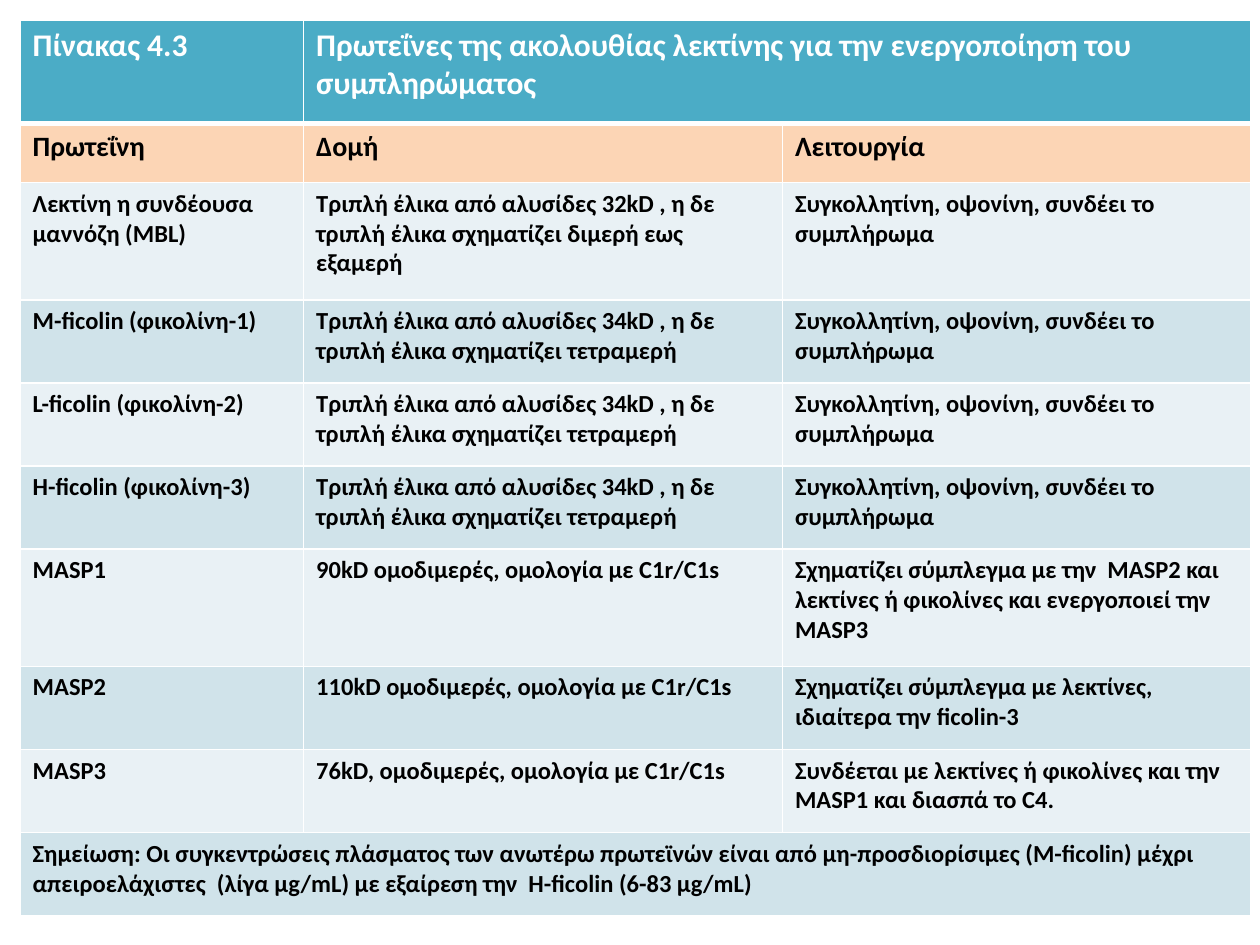
from dataclasses import dataclass

from lxml import etree
from pptx import Presentation
from pptx.dml.color import RGBColor
from pptx.oxml import ns
from pptx.util import Inches, Pt


@dataclass(frozen=True)
class Theme:
    font: str = "Calibri"
    white: str = "FFFFFF"
    black: str = "000000"
    title_fill: str = "4BACC6"
    heading_fill: str = "FCD5B5"
    bands: tuple = ("E9F1F5", "D0E3EA")
    title_size: int = 18
    heading_size: int = 16
    body_size: int = 14
    border: int = 1
    title_border: int = 3


THEME = Theme()
COLUMN_WIDTHS = (2.25, 3.8, 3.72)
TITLE_HEIGHT, HEADING_HEIGHT = 0.82, 0.47
TWO_LINES, THREE_LINES = 0.66, 0.93

TITLE = ("Πίνακας 4.3",
         "Πρωτεΐνες της ακολουθίας λεκτίνης για την ενεργοποίηση του συμπληρώματος")
HEADINGS = ("Πρωτεΐνη", "Δομή", "Λειτουργία")
TETRAMER = "Τριπλή έλικα από αλυσίδες 34kD , η δε τριπλή έλικα σχηματίζει τετραμερή"
OPSONIN = "Συγκολλητίνη, οψονίνη, συνδέει το συμπλήρωμα"
PROTEINS = (
    (THREE_LINES, ("Λεκτίνη η συνδέουσα μαννόζη (MBL)",
                   "Τριπλή έλικα από αλυσίδες 32kD , η δε τριπλή έλικα "
                   "σχηματίζει διμερή εως εξαμερή", OPSONIN)),
    (TWO_LINES, ("M-ficolin (φικολίνη-1)", TETRAMER, OPSONIN)),
    (TWO_LINES, ("L-ficolin (φικολίνη-2)", TETRAMER, OPSONIN)),
    (TWO_LINES, ("H-ficolin (φικολίνη-3)", TETRAMER, OPSONIN)),
    (THREE_LINES, ("MASP1", "90kD ομοδιμερές, ομολογία με C1r/C1s",
                   "Σχηματίζει σύμπλεγμα με την  MASP2 και λεκτίνες ή φικολίνες "
                   "και ενεργοποιεί την MASP3")),
    (TWO_LINES, ("MASP2", "110kD ομοδιμερές, ομολογία με C1r/C1s",
                 "Σχηματίζει σύμπλεγμα με λεκτίνες, ιδιαίτερα την ficolin-3")),
    (TWO_LINES, ("MASP3", "76kD, ομοδιμερές, ομολογία με C1r/C1s",
                 "Συνδέεται με λεκτίνες ή φικολίνες και την MASP1 και διασπά το C4.")),
)
NOTE = ("Σημείωση: Οι συγκεντρώσεις πλάσματος των ανωτέρω πρωτεϊνών είναι από "
        "μη-προσδιορίσιμες (M-ficolin) μέχρι απειροελάχιστες  (λίγα μg/mL) "
        "με εξαίρεση την  H-ficolin (6-83 μg/mL)")


def table_rows():
    """Return height, texts, fill, font colour and size of each row."""
    rows = [(TITLE_HEIGHT, TITLE, THEME.title_fill, THEME.white, THEME.title_size),
            (HEADING_HEIGHT, HEADINGS, THEME.heading_fill, THEME.black,
             THEME.heading_size)]
    for index, (height, texts) in enumerate(PROTEINS + ((TWO_LINES, (NOTE,)),)):
        rows.append((height, texts, THEME.bands[index % 2], THEME.black,
                     THEME.body_size))
    return rows


def set_borders(cell, widths):
    """Draw white cell borders; widths maps a side tag to points."""
    properties = cell._tc.get_or_add_tcPr()
    for position, (side, width) in enumerate(widths.items()):
        line = etree.Element(ns.qn(f"a:{side}"), w=str(Pt(width)))
        fill = etree.SubElement(line, ns.qn("a:solidFill"))
        etree.SubElement(fill, ns.qn("a:srgbClr"), val=THEME.white)
        properties.insert(position, line)


def write_cell(cell, content, color, size):
    cell.text = content
    font = cell.text_frame.paragraphs[0].runs[0].font
    for name, value in {"name": THEME.font, "size": Pt(size), "bold": True}.items():
        setattr(font, name, value)
    font.color.rgb = RGBColor.from_string(color)


def format_row(table, index, fill):
    sides = dict.fromkeys(("lnL", "lnR", "lnT", "lnB"), THEME.border)
    if index == 0:
        sides["lnB"] = THEME.title_border
    if index == 1:
        sides["lnT"] = THEME.title_border
    for cell in table.rows[index].cells:
        cell.fill.solid()
        cell.fill.fore_color.rgb = RGBColor.from_string(fill)
        set_borders(cell, sides)


def add_protein_table(slide):
    rows = table_rows()
    height = sum(row[0] for row in rows)
    table = slide.shapes.add_table(
        len(rows), len(COLUMN_WIDTHS), Inches(0.16), Inches(0.16),
        Inches(sum(COLUMN_WIDTHS)), Inches(height)).table
    for column, width in zip(table.columns, COLUMN_WIDTHS):
        column.width = Inches(width)
    last = len(COLUMN_WIDTHS) - 1
    for index, (height, texts, fill, color, size) in enumerate(rows):
        table.rows[index].height = Inches(height)
        format_row(table, index, fill)
        if len(texts) <= last:
            table.cell(index, len(texts) - 1).merge(table.cell(index, last))
        for column, content in enumerate(texts):
            write_cell(table.cell(index, column), content, color, size)


def main():
    presentation = Presentation()
    presentation.slide_width = Inches(10)
    presentation.slide_height = Inches(7.5)
    slide = presentation.slides.add_slide(presentation.slide_layouts[6])
    add_protein_table(slide)
    presentation.save("out.pptx")


if __name__ == "__main__":
    main()
